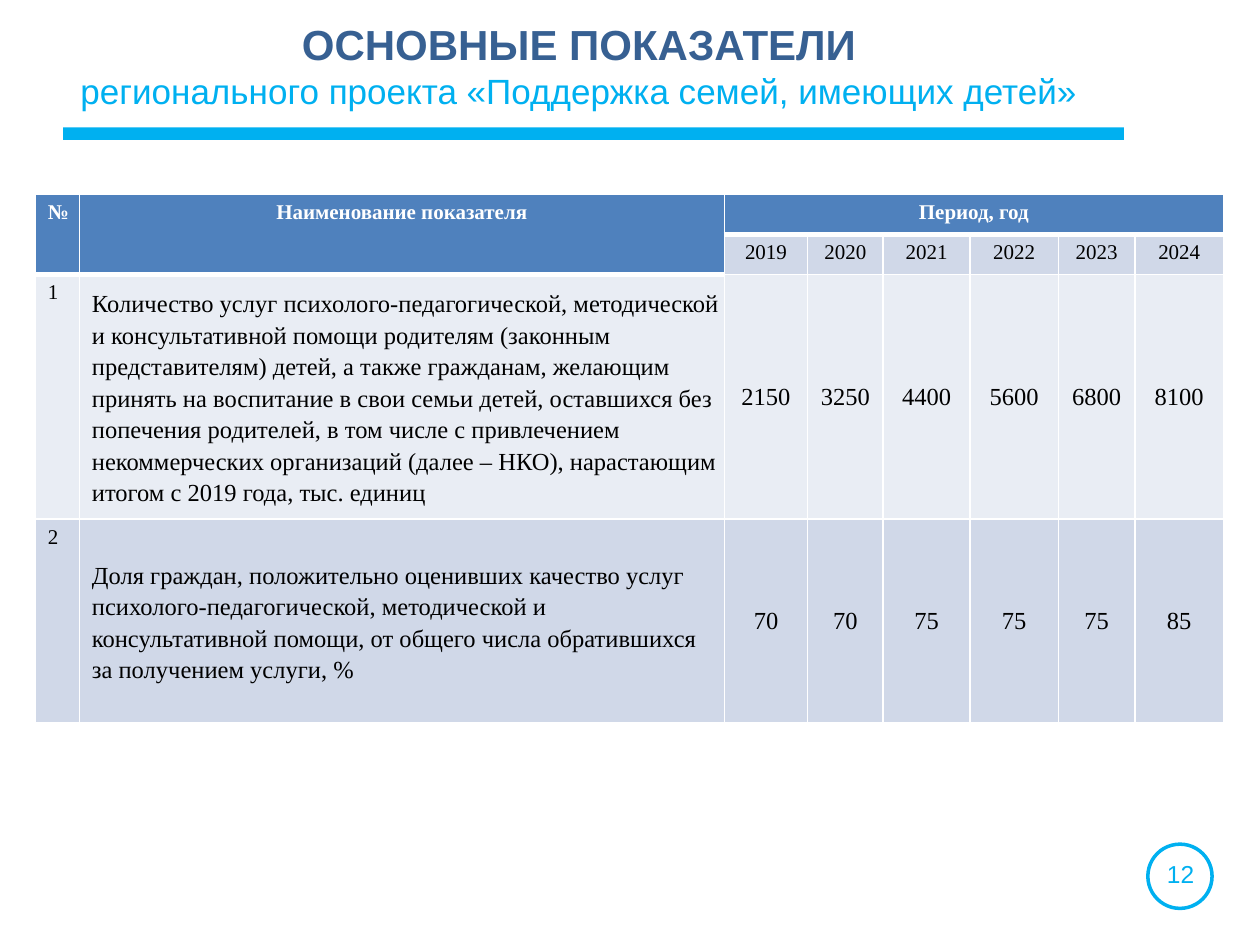
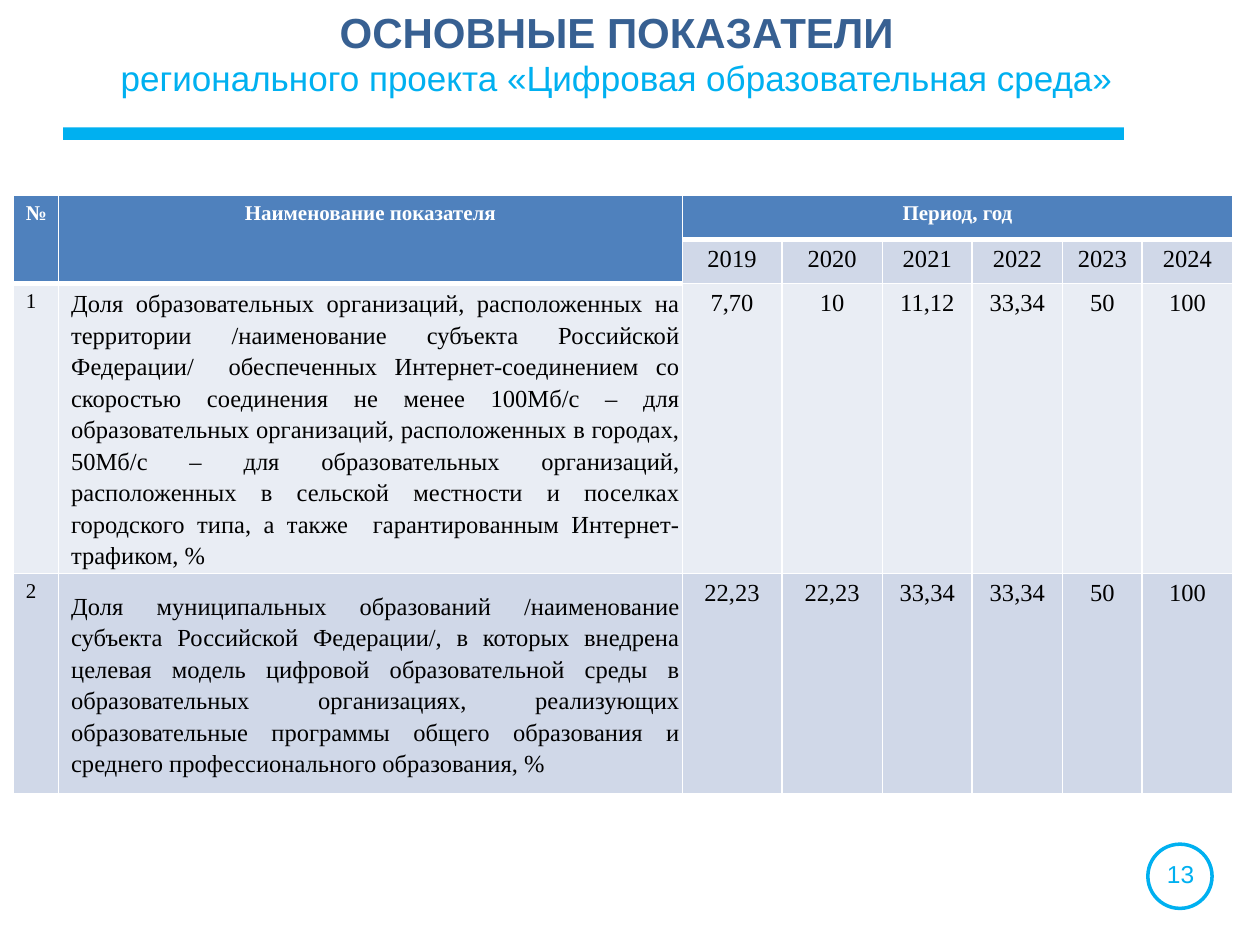
from dataclasses import dataclass

from lxml.etree import SubElement
from pptx import Presentation
from pptx.dml.color import RGBColor as RGB
from pptx.enum.shapes import MSO_SHAPE as SHAPE
from pptx.enum.text import MSO_ANCHOR as ANCHOR, PP_ALIGN as ALIGN
from pptx.oxml.ns import qn
from pptx.util import Inches, Pt

WIDTH, HEIGHT = Inches(10), Inches(7.5)


@dataclass(frozen=True)
class Theme:
    accent: str = "00B0F0"
    heading: str = "376092"
    head_fill: str = "4F81BD"
    dark_band: str = "D0D8E8"
    light_band: str = "E9EDF4"
    white: str = "FFFFFF"
    black: str = "000000"
    sans: str = "Arial"
    serif: str = "Times New Roman"
    title_size: int = 24
    subtitle_size: int = 20
    body_size: int = 14
    small_size: int = 12
    description_leading: int = 18
    grid_line: int = 1
    head_line: int = 3


THEME = Theme()
YEARS = ["2019", "2020", "2021", "2022", "2023", "2024"]

# Boxes, columns and rows are percentages of the slide's width and height
SLIDES = [
    dict(
        page="12",
        subtitle="регионального проекта «Поддержка семей, имеющих детей»",
        title_box=(2.6, 1.33, 86.7, 16.27),
        table_at=(2.8, 20.53),
        columns=[3.5, 51.2, 6.6, 6, 6.9, 7, 6.1, 7],
        rows=[4.27, 4.27, 25.87, 21.6],
        year_size=THEME.small_size,
        description_align=ALIGN.LEFT,
        value_anchor=ANCHOR.MIDDLE,
        indicators=[
            ("Количество услуг психолого-педагогической, методической и "
             "консультативной помощи родителям (законным представителям) детей, "
             "а также гражданам, желающим принять на воспитание в свои семьи "
             "детей, оставшихся без попечения родителей, в том числе с "
             "привлечением некоммерческих организаций (далее – НКО), "
             "нарастающим итогом с 2019 года, тыс. единиц",
             ["2150", "3250", "4400", "5600", "6800", "8100"]),
            ("Доля граждан, положительно оценивших качество услуг "
             "психолого-педагогической, методической и консультативной помощи, "
             "от общего числа обратившихся за получением услуги, %",
             ["70", "70", "75", "75", "75", "85"]),
        ],
    ),
    dict(
        page="13",
        subtitle="регионального проекта «Цифровая образовательная среда»",
        title_box=(4.8, 0, 88.3, 17.2),
        table_at=(1.05, 20.67),
        columns=[3.6, 49.5, 7.9, 8, 7.1, 7.2, 6.3, 7.2],
        rows=[4.67, 4.67, 30.67, 23.33],
        year_size=THEME.body_size,
        description_align=ALIGN.JUSTIFY,
        value_anchor=ANCHOR.TOP,
        indicators=[
            ("Доля образовательных организаций, расположенных на территории "
             "/наименование субъекта Российской Федерации/  обеспеченных "
             "Интернет-соединением со скоростью соединения не менее 100Мб/c – "
             "для образовательных организаций, расположенных в городах, "
             "50Мб/c – для образовательных организаций, расположенных в "
             "сельской местности и поселках городского типа, а также  "
             "гарантированным Интернет-трафиком, %",
             ["7,70", "10", "11,12", "33,34", "50", "100"]),
            ("Доля муниципальных образований /наименование субъекта Российской "
             "Федерации/, в которых внедрена целевая модель цифровой "
             "образовательной среды в образовательных организациях, реализующих "
             "образовательные программы общего образования и среднего "
             "профессионального образования, %",
             ["22,23", "22,23", "33,34", "33,34", "50", "100"]),
        ],
    ),
]


def across(percent):
    return int(WIDTH * percent / 100)


def down(percent):
    return int(HEIGHT * percent / 100)


def box(left, top, width, height):
    return across(left), down(top), across(width), down(height)


def write(p, text, color, size, name, bold=False, align=ALIGN.CENTER):
    p.alignment = align
    r = p.add_run()
    r.text = text
    formats = dict(name=name, size=Pt(size), bold=bold)
    for key, value in formats.items():
        setattr(r.font, key, value)
    r.font.color.rgb = RGB.from_string(color)


# Parts shared by the slides
def add_title(s, subtitle, place):
    sp = s.shapes.title
    sp.left, sp.top, sp.width, sp.height = box(*place)
    tf = sp.text_frame
    tf.vertical_anchor = ANCHOR.TOP
    write(tf.paragraphs[0], "ОСНОВНЫЕ ПОКАЗАТЕЛИ", THEME.heading,
          THEME.title_size, THEME.sans, bold=True)
    write(tf.add_paragraph(), subtitle, THEME.accent,
          THEME.subtitle_size, THEME.sans)


def add_band(s):
    sp = s.shapes.add_shape(SHAPE.RECTANGLE, *box(5, 13.47, 84.2, 1.33))
    sp.shadow.inherit = False
    sp.fill.solid()
    sp.fill.fore_color.rgb = RGB.from_string(THEME.accent)
    sp.line.fill.background()


def add_page_number(s, page):
    ring = s.shapes.add_shape(SHAPE.OVAL, *box(91.1, 89.33, 5.1, 6.8))
    ring.shadow.inherit = False
    ring.fill.background()
    ring.line.color.rgb = RGB.from_string(THEME.accent)
    ring.line.width = Pt(2)
    tf = s.shapes.add_textbox(*box(90.8, 90.27, 5.8, 4.53)).text_frame
    tf.word_wrap = True
    write(tf.paragraphs[0], page, THEME.accent, THEME.body_size, THEME.sans)


# Table
def set_borders(cell, top, bottom):
    tcPr = cell._tc.get_or_add_tcPr()
    widths = dict(L=THEME.grid_line, R=THEME.grid_line, T=top, B=bottom)
    for side, width in widths.items():
        ln = SubElement(tcPr, qn(f"a:ln{side}"), w=str(Pt(width)))
        fill = SubElement(ln, qn("a:solidFill"))
        SubElement(fill, qn("a:srgbClr"), val=THEME.white)


def paint_cell(cell, row, col):
    in_head = row == 0 or (row == 1 and col < 2)
    head_end = 1 if col < 2 else 0
    set_borders(cell,
                THEME.head_line if row == head_end + 1 else THEME.grid_line,
                THEME.head_line if row == head_end else THEME.grid_line)
    band = THEME.dark_band if row % 2 else THEME.light_band
    cell.fill.solid()
    cell.fill.fore_color.rgb = RGB.from_string(
        THEME.head_fill if in_head else band)


def fill_cell(cell, text, size=THEME.body_size, color=THEME.black, **options):
    write(cell.text_frame.paragraphs[0], text, color, size, THEME.serif,
          **options)


def fill_description(cell, text, align):
    formats = dict(vertical_anchor=ANCHOR.MIDDLE, margin_left=Inches(0.02),
                   margin_right=Inches(0.02), margin_top=0, margin_bottom=0)
    for key, value in formats.items():
        setattr(cell, key, value)
    p = cell.text_frame.paragraphs[0]
    p._p.get_or_add_pPr().set("marL", str(Inches(0.08)))
    p.line_spacing = Pt(THEME.description_leading)
    fill_cell(cell, text, align=align)


def add_indicator_table(s, data):
    columns, rows = data["columns"], data["rows"]
    left, top = data["table_at"]
    table = s.shapes.add_table(
        len(rows), len(columns),
        *box(left, top, sum(columns), sum(rows))).table
    for column, width in zip(table.columns, columns):
        column.width = across(width)
    for row, height in zip(table.rows, rows):
        row.height = down(height)
    for row in range(len(rows)):
        for col in range(len(columns)):
            paint_cell(table.cell(row, col), row, col)

    # Heading rows
    for col, end, text in [(0, (1, 0), "№"),
                           (1, (1, 1), "Наименование показателя"),
                           (2, (0, len(columns) - 1), "Период, год")]:
        cell = table.cell(0, col)
        cell.merge(table.cell(*end))
        fill_cell(cell, text, THEME.small_size, THEME.white, bold=True)
    for col, year in enumerate(YEARS, 2):
        fill_cell(table.cell(1, col), year, data["year_size"])

    # One row per indicator
    for number, (name, values) in enumerate(data["indicators"], 1):
        row = number + 1
        fill_cell(table.cell(row, 0), str(number), THEME.small_size,
                  align=ALIGN.LEFT)
        fill_description(table.cell(row, 1), name, data["description_align"])
        for col, value in enumerate(values, 2):
            cell = table.cell(row, col)
            cell.vertical_anchor = data["value_anchor"]
            fill_cell(cell, value)


def main():
    prs = Presentation()
    prs.slide_width, prs.slide_height = WIDTH, HEIGHT
    title_only = prs.slide_layouts[5]
    for data in SLIDES:
        s = prs.slides.add_slide(title_only)
        add_band(s)
        add_page_number(s, data["page"])
        add_title(s, data["subtitle"], data["title_box"])
        add_indicator_table(s, data)
    prs.save("out.pptx")


if __name__ == "__main__":
    main()
